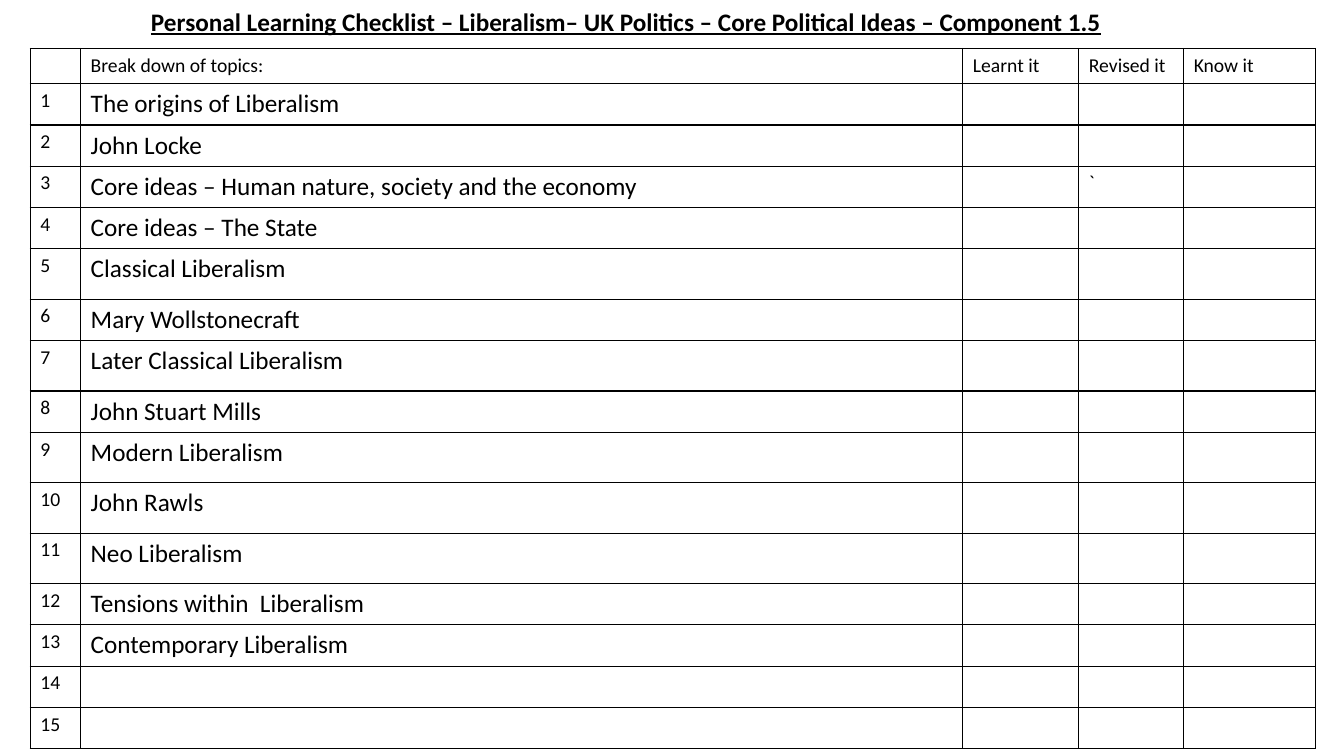
from lxml import etree
from pptx import Presentation
from pptx.dml.color import RGBColor
from pptx.enum.text import MSO_ANCHOR, MSO_AUTO_SIZE, PP_ALIGN
from pptx.oxml.ns import qn
from pptx.util import Inches, Pt

MIDDLE, CENTER, NO_FIT = MSO_ANCHOR.MIDDLE, PP_ALIGN.CENTER, MSO_AUTO_SIZE.NONE
BLACK, WHITE = "000000", "FFFFFF"
HEADS = ["", "Break down of topics:", "Learnt it", "Revised it", "Know it"]
TOPICS = [
    "The origins of Liberalism",
    "John Locke",
    "Core ideas – Human nature, society and the economy",
    "Core ideas – The State",
    "Classical Liberalism",
    "Mary Wollstonecraft",
    "Later Classical Liberalism",
    "John Stuart Mills",
    "Modern Liberalism",
    "John Rawls",
    "Neo Liberalism",
    "Tensions within  Liberalism",
    "Contemporary Liberalism",
    "",
    "",
]
WIDTHS = [0.5, 8.75, 1.15, 1.04, 1.31]
HEAD_H, ROW_H, TALL_H = 0.35, 0.41, 0.5
TALL = {5, 7, 9, 10, 11}


def style(run, size):
    run.font.name = "Calibri"
    run.font.size = Pt(size)
    run.font.color.rgb = RGBColor.from_string(BLACK)


def frame(cell):
    """Draw a thin black border on all four sides of a cell."""
    props = cell._tc.get_or_add_tcPr()
    for i, side in enumerate(["a:lnL", "a:lnR", "a:lnT", "a:lnB"]):
        line = etree.Element(qn(side), w=str(Pt(1)))
        fill = etree.SubElement(line, qn("a:solidFill"))
        etree.SubElement(fill, qn("a:srgbClr"), val=BLACK)
        props.insert(i, line)


deck = Presentation()
deck.slide_width, deck.slide_height = Inches(13.33), Inches(7.5)
slide = deck.slides.add_slide(deck.slide_layouts[5])

title = slide.shapes.title
title.left, title.top = Inches(0), Inches(-0.02)
title.width, title.height = Inches(12.42), Inches(0.5)
text = title.text_frame
text.text = "Personal Learning Checklist – Liberalism– UK Politics – Core Political Ideas – Component 1.5"
text.auto_size = NO_FIT
text.vertical_anchor = MIDDLE
para = text.paragraphs[0]
para.alignment = CENTER
para.line_spacing = 0.9
style(para.runs[0], 18)
para.runs[0].font.bold = True
para.runs[0].font.underline = True

rows = [HEADS] + [[str(n), topic, "", "", ""] for n, topic in enumerate(TOPICS, 1)]
rows[3][3] = "`"
heights = [HEAD_H] + [TALL_H if n in TALL else ROW_H for n in range(1, len(rows))]

table = slide.shapes.add_table(
    len(rows), len(WIDTHS), Inches(0.3), Inches(0.48),
    Inches(sum(WIDTHS)), Inches(sum(heights))).table
table.first_row = False
table.horz_banding = False
for col, width in zip(table.columns, WIDTHS):
    col.width = Inches(width)

for r, row in enumerate(rows):
    table.rows[r].height = Inches(heights[r])
    for c, label in enumerate(row):
        cell = table.cell(r, c)
        cell.fill.solid()
        cell.fill.fore_color.rgb = RGBColor.from_string(WHITE)
        frame(cell)
        size = 18 if r and c == 1 else 14
        para = cell.text_frame.paragraphs[0]
        if label:
            para.text = label
            style(para.runs[0], size)
        else:
            para._p.get_or_add_endParaRPr().set("sz", str(size * 100))

deck.save("out.pptx")
